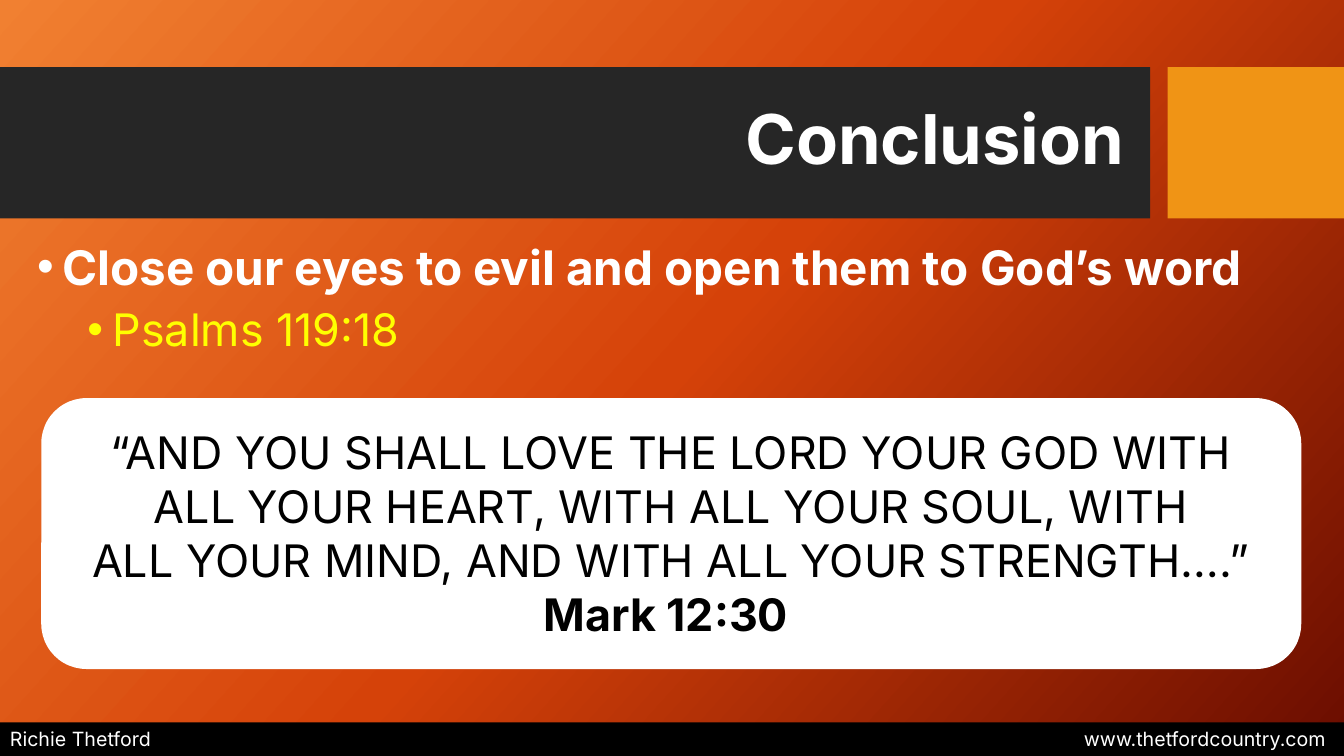
"""Build the Conclusion slide with its verse card and footer."""
from dataclasses import dataclass
from typing import Optional

from lxml import etree
from pptx import Presentation
from pptx.dml import color
from pptx.enum import shapes, text
from pptx.oxml import ns
from pptx.util import Pt

COLORS = {
    "charcoal": "262626", "amber": "F09415", "black": "000000",
    "white": "FFFFFF", "yellow": "FFFF00",
}
GRADIENT = {0: "F18031", 50: "D54209", 100: "6A0D00"}
GRADIENT_ANGLE = 42
FONT = "Inter"
WIDTH, HEIGHT = 960, 540


@dataclass
class Panel:
    left: float
    top: float
    width: float
    height: float
    fill: str
    kind: shapes.MSO_SHAPE = shapes.MSO_SHAPE.RECTANGLE


@dataclass
class Line:
    words: str
    size: float
    color: str
    bold: bool = False
    align: text.PP_ALIGN = text.PP_ALIGN.LEFT
    space_before: float = 0
    spacing: float = 1.0
    bullet_indent: Optional[float] = None
    right_tab: Optional[float] = None


@dataclass
class TextBox:
    left: float
    top: float
    width: float
    height: float
    lines: list[Line]
    anchor: text.MSO_ANCHOR = text.MSO_ANCHOR.TOP


PANELS = [
    Panel(0, 48, 821.5, 108, "charcoal"),
    Panel(834, 48, 126, 108, "amber"),
    Panel(0, 516, WIDTH, 24, "black"),
    Panel(29.5, 284.4, 900, 193.5, "white", shapes.MSO_SHAPE.ROUNDED_RECTANGLE),
]
VERSE = (
    "“AND YOU SHALL LOVE THE LORD YOUR GOD WITH\n"
    "ALL YOUR HEART, WITH ALL YOUR SOUL, WITH\n"
    "ALL YOUR MIND, AND WITH ALL YOUR STRENGTH….”"
)
TEXT_BOXES = [
    TextBox(10.8, 59, 799.2, 85, [
        Line("Conclusion", 49, "white", True, text.PP_ALIGN.RIGHT, spacing=0.9),
    ], text.MSO_ANCHOR.MIDDLE),
    TextBox(19.4, 166.3, 928, 98, [
        Line("Close our eyes to evil and open them to God’s word", 34, "white", True,
             bullet_indent=18),
        Line("Psalms 119:18", 32, "yellow", space_before=5, bullet_indent=54),
    ]),
    TextBox(0, 516, WIDTH, 24, [
        Line("Richie Thetford\twww.thetfordcountry.com", 14, "white", right_tab=940),
    ]),
    TextBox(29.5, 300.2, 900, 162.7, [
        Line(VERSE, 32, "black", align=text.PP_ALIGN.CENTER),
        Line("Mark 12:30 ", 32, "black", True, text.PP_ALIGN.CENTER),
    ]),
]


def set_background(slide) -> None:
    background = slide.background.fill
    background.gradient()
    gradient = slide.element.find(".//" + ns.qn("a:gradFill"))
    stops = gradient.find(ns.qn("a:gsLst"))
    for stop in list(stops):
        stops.remove(stop)
    for position, hex_color in GRADIENT.items():
        stop = etree.SubElement(stops, ns.qn("a:gs"), pos=str(position * 1000))
        etree.SubElement(stop, ns.qn("a:srgbClr"), val=hex_color)
    direction = gradient.find(ns.qn("a:lin"))
    direction.set("ang", str(GRADIENT_ANGLE * 60000))
    direction.set("scaled", "0")


def add_panel(slide, panel: Panel) -> None:
    shape = slide.shapes.add_shape(
        panel.kind, Pt(panel.left), Pt(panel.top), Pt(panel.width), Pt(panel.height))
    shape.shadow.inherit = False
    shape.fill.solid()
    shape.fill.fore_color.rgb = color.RGBColor.from_string(COLORS[panel.fill])
    shape.line.fill.background()


def write_line(paragraph, line: Line) -> None:
    paragraph.text = line.words
    paragraph.alignment = line.align
    paragraph.line_spacing = line.spacing
    if line.space_before:
        paragraph.space_before = Pt(line.space_before)
    properties = paragraph._p.get_or_add_pPr()
    if line.bullet_indent is not None:
        properties.set("marL", str(Pt(line.bullet_indent)))
        properties.set("indent", str(Pt(-18)))
        etree.SubElement(properties, ns.qn("a:buFont"), typeface="Arial")
        etree.SubElement(properties, ns.qn("a:buChar"), char="•")
    if line.right_tab is not None:
        tabs = etree.SubElement(properties, ns.qn("a:tabLst"))
        etree.SubElement(tabs, ns.qn("a:tab"), pos=str(Pt(line.right_tab)), algn="r")
    paragraph.font.name = FONT
    paragraph.font.size = Pt(line.size)
    paragraph.font.bold = line.bold
    paragraph.font.color.rgb = color.RGBColor.from_string(COLORS[line.color])


def add_text_box(slide, box: TextBox) -> None:
    shape = slide.shapes.add_textbox(
        Pt(box.left), Pt(box.top), Pt(box.width), Pt(box.height))
    frame = shape.text_frame
    frame.word_wrap = True
    frame.vertical_anchor = box.anchor
    for index, line in enumerate(box.lines):
        paragraph = frame.add_paragraph() if index else frame.paragraphs[0]
        write_line(paragraph, line)


def main() -> None:
    presentation = Presentation()
    presentation.slide_width, presentation.slide_height = Pt(WIDTH), Pt(HEIGHT)
    slide = presentation.slides.add_slide(presentation.slide_layouts[6])
    set_background(slide)
    for panel in PANELS:
        add_panel(slide, panel)
    for box in TEXT_BOXES:
        add_text_box(slide, box)
    presentation.save("out.pptx")


if __name__ == "__main__":
    main()
